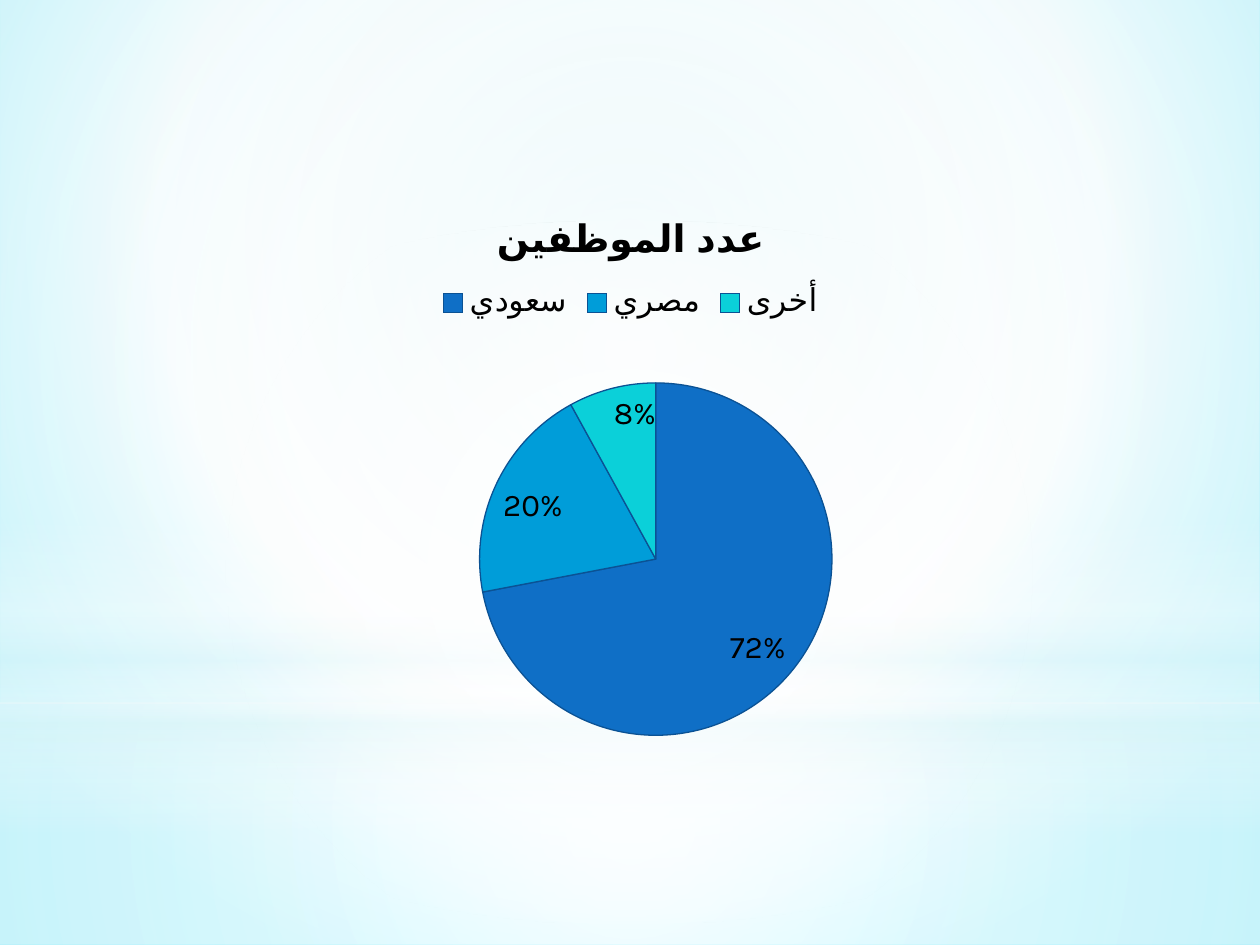
from dataclasses import dataclass
from typing import Optional

from lxml.etree import SubElement
from pptx import Presentation
from pptx.chart.data import CategoryChartData
from pptx.dml.color import RGBColor
from pptx.enum.chart import XL_CHART_TYPE as ChartType
from pptx.enum.chart import XL_LABEL_POSITION as LabelPos
from pptx.enum.chart import XL_LEGEND_POSITION as LegendPos
from pptx.enum.shapes import MSO_SHAPE as Shape
from pptx.oxml.ns import qn
from pptx.util import Inches, Pt

COLORS = {
    "white": "FFFFFF", "mist": "DBF5F9", "pale": "CAF0F6", "aqua": "79EDFF",
    "text": "000000", "outline": "0B5294",
}
FONT = "Karla"
TITLE = "عدد الموظفين"
CENTER = (50, 50, 50, 50)


@dataclass
class Gradient:
    stops: list[tuple[int, str, int]]
    focus: Optional[tuple[int, int, int, int]] = CENTER
    angle: int = 90


@dataclass
class Glow:
    shape: Shape
    top: float
    height: float
    gradient: Gradient


@dataclass
class Slice:
    name: str
    value: int
    color: str


BACKDROP = Gradient([(0, "pale", 100), (60, "white", 100), (100, "aqua", 100)], (20, 10, 20, 60))
GLOWS = [
    Glow(Shape.RECTANGLE, 5.58, 1.92,
         Gradient([(0, "white", 91), (37, "white", 76), (100, "mist", 79)])),
    Glow(Shape.RECTANGLE, 0, 5.58,
         Gradient([(0, "white", 89), (48, "white", 62), (100, "mist", 79)])),
    Glow(Shape.RECTANGLE, 4.12, 2.5,
         Gradient([(0, "white", 0), (29, "white", 30), (45, "mist", 40),
                   (55, "white", 26), (65, "mist", 60), (100, "white", 0)], None)),
    Glow(Shape.OVAL, 1.75, 5.58, Gradient([(0, "white", 100), (56, "white", 0)])),
]
SLICES = [
    Slice("سعودي", 72, "0F6FC6"),
    Slice("مصري", 20, "009DD9"),
    Slice("أخرى", 8, "0BD0D9"),
]


def rgb(name: str) -> RGBColor:
    return RGBColor.from_string(COLORS[name])


def set_gradient(parent, gradient: Gradient) -> None:
    solid = parent.find(qn("a:solidFill"))
    grad = SubElement(parent, qn("a:gradFill"), rotWithShape="1")
    parent.replace(solid, grad)
    stops = SubElement(grad, qn("a:gsLst"))
    for pos, color, alpha in gradient.stops:
        gs = SubElement(stops, qn("a:gs"), pos=str(pos * 1000))
        clr = SubElement(gs, qn("a:srgbClr"), val=COLORS[color])
        if alpha < 100:
            SubElement(clr, qn("a:alpha"), val=str(alpha * 1000))
    if gradient.focus:
        shade = SubElement(grad, qn("a:path"), path="circle")
        sides = {k: str(v * 1000) for k, v in zip("ltrb", gradient.focus)}
        SubElement(shade, qn("a:fillToRect"), **sides)
    else:
        SubElement(grad, qn("a:lin"), ang=str(gradient.angle * 60000), scaled="0")


def add_glow(s, glow: Glow) -> None:
    sp = s.shapes.add_shape(glow.shape, 0, Inches(glow.top), Inches(10), Inches(glow.height))
    sp.shadow.inherit = False
    sp.line.fill.background()
    sp.fill.solid()
    set_gradient(sp._element.spPr, glow.gradient)


def style_font(font, size: float, bold: bool = False) -> None:
    font.name = FONT
    font.size = Pt(size)
    font.bold = bold
    font.color.rgb = rgb("text")


def place_plot(chart, x: float, y: float, w: float, h: float) -> None:
    area = chart._chartSpace.find(".//" + qn("c:plotArea"))
    layout = area.find(qn("c:layout"))
    if layout is None:
        layout = SubElement(area, qn("c:layout"))
        area.insert(0, layout)
    manual = SubElement(layout, qn("c:manualLayout"))
    settings = {"layoutTarget": "inner", "xMode": "edge", "yMode": "edge",
                "x": x, "y": y, "w": w, "h": h}
    for tag, val in settings.items():
        SubElement(manual, qn(f"c:{tag}"), val=str(val))


def add_pie(s, slices: list[Slice]) -> None:
    data = CategoryChartData()
    data.categories = [item.name for item in slices]
    data.add_series(TITLE, [item.value for item in slices])
    chart = s.shapes.add_chart(ChartType.PIE, Inches(1.67), Inches(1.53),
                               Inches(6.67), Inches(4.44), data).chart
    style_font(chart.font, 18)

    chart.has_title = True
    tf = chart.chart_title.text_frame
    tf.text = TITLE
    style_font(tf.paragraphs[0].runs[0].font, 21.6, True)

    chart.has_legend = True
    chart.legend.position = LegendPos.TOP
    chart.legend.include_in_layout = False
    style_font(chart.legend.font, 18)

    plot = chart.plots[0]
    plot.vary_by_categories = True
    plot.has_data_labels = True
    labels = plot.data_labels
    labels.show_percentage = True
    labels.show_value = False
    labels.number_format = "0%"
    labels.number_format_is_linked = False
    labels.position = LabelPos.INSIDE_END
    style_font(labels.font, 18)

    for i, item in enumerate(slices):
        fmt = plot.series[0].points[i].format
        fmt.fill.solid()
        fmt.fill.fore_color.rgb = RGBColor.from_string(item.color)
        fmt.line.color.rgb = rgb("outline")
        fmt.line.width = Pt(0.75)
    place_plot(chart, 0.32, 0.34, 0.42, 0.63)


def main() -> None:
    prs = Presentation()
    prs.slide_width, prs.slide_height = Inches(10), Inches(7.5)
    s = prs.slides.add_slide(prs.slide_layouts[6])
    s.background.fill.solid()
    set_gradient(s._element.find(".//" + qn("p:bgPr")), BACKDROP)
    for glow in GLOWS:
        add_glow(s, glow)
    add_pie(s, SLICES)
    prs.save("out.pptx")


if __name__ == "__main__":
    main()
